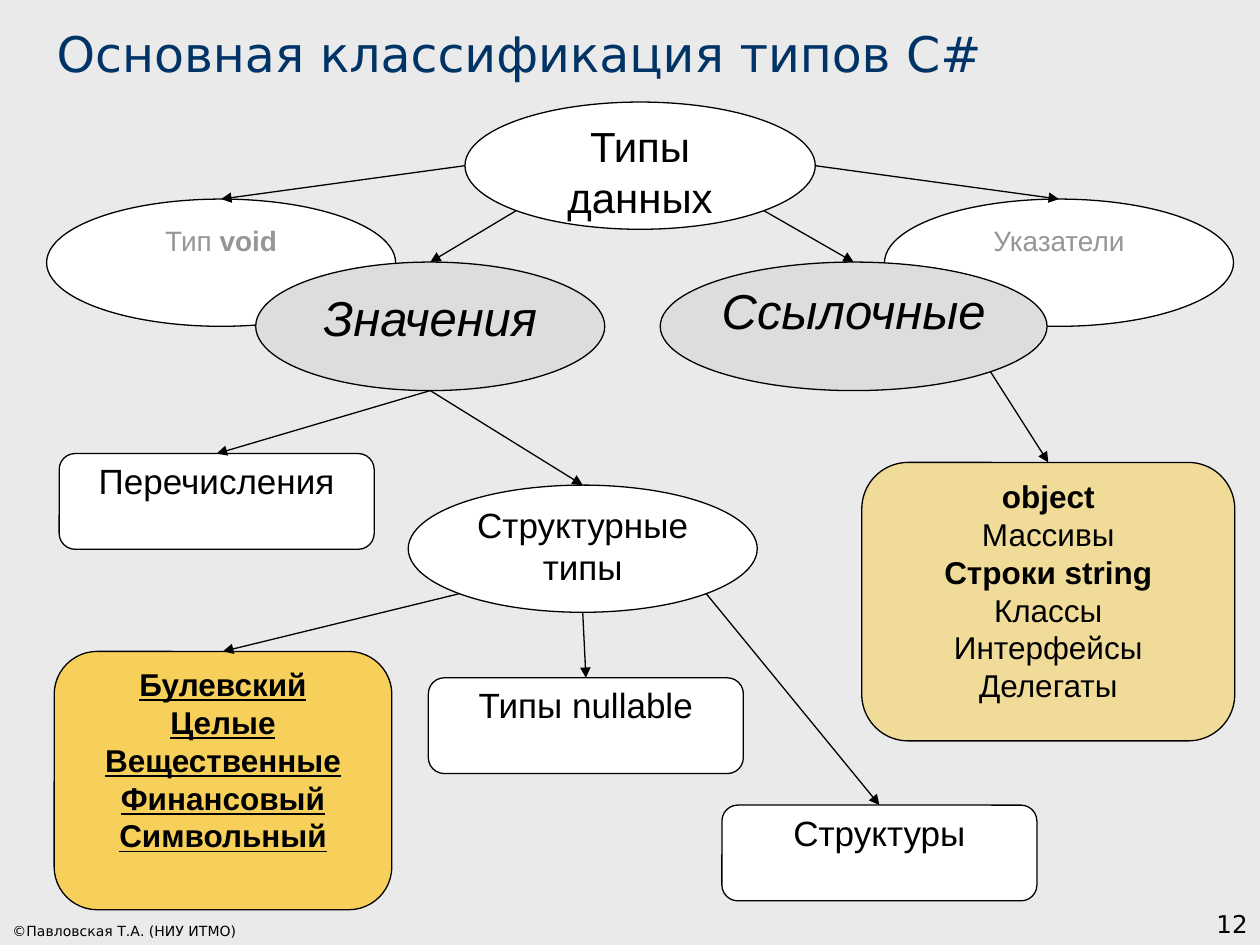
from lxml.etree import SubElement
from pptx import Presentation
from pptx.dml.color import RGBColor
from pptx.enum.shapes import MSO_CONNECTOR, MSO_SHAPE
from pptx.enum.text import MSO_ANCHOR, PP_ALIGN
from pptx.oxml.ns import qn
from pptx.util import Inches, Pt

COLORS = {"bg": "EAEAEA", "black": "000000", "white": "FFFFFF", "muted": "969696",
          "group": "DDDDDD", "amber": "FFC000", "title": "003366"}
TITLE = "Основная классификация типов C#"
FOOTER = "©Павловская Т.А. (НИУ ИТМО)"
NUMBER = "12"

ROUND = {"kind": MSO_SHAPE.ROUNDED_RECTANGLE, "ins": (0.02, 0.01, 0.02, 0.01)}
FLAT = (0, 0, 0, 0)
NODES = {
    "void": ((0.37, 1.58, 2.77, 1.01), [["Тип ", ("void", True)]], 16, {"color": "muted"}),
    "pointers": ((7.02, 1.58, 2.77, 1.01), ["Указатели"], 16, {"color": "muted"}),
    "types": ((3.69, 0.81, 2.78, 1.01), ["Типы данных"], 24, {"ins": (0.1, 0, 0.1, 0.05)}),
    "references": ((5.24, 2.08, 3.07, 1.02), ["Ссылочные"], 28,
                   {"fill": "group", "italic": True, "ins": FLAT}),
    "values": ((2.03, 2.08, 2.77, 1.02), ["Значения"], 28, {"fill": "group", "italic": True}),
    "classes": ((6.84, 3.67, 2.96, 2.21),
                [[("object", True)], "Массивы", [("Строки string", True)],
                 "Классы", "Интерфейсы", "Делегаты"], 18,
                {"fill": "amber", "alpha": 35, **ROUND}),
    "builtin": ((0.43, 5.17, 2.68, 2.05),
                ["Булевский", "Целые", "Вещественные", "Финансовый", "Символьный"], 18,
                {"fill": "amber", "alpha": 61, "bold": True, "underline": True, **ROUND}),
    "enums": ((0.47, 3.6, 2.5, 0.76), ["Перечисления"], 20, ROUND),
    "structural": ((3.24, 3.85, 2.77, 1.01), ["Структурные", "типы"], 20, {"ins": FLAT}),
    "structs": ((5.73, 6.39, 2.5, 0.76), ["Структуры"], 20, ROUND),
    "nullable": ((3.4, 5.38, 2.5, 0.76), ["Типы nullable"], 20, ROUND),
}
SITES = {"left": (0, 0.5), "right": (1, 0.5), "top": (0.5, 0), "bottom": (0.5, 1),
         "bottom left": (0.146, 0.854), "bottom right": (0.854, 0.854)}
LINKS = [
    ("types", "left", "void"),
    ("types", "right", "pointers"),
    ("types", "bottom left", "values"),
    ("types", "bottom right", "references"),
    ("values", "bottom", "enums"),
    ("values", "bottom", "structural"),
    ("references", "bottom right", "classes"),
    ("structural", "bottom left", "builtin"),
    ("structural", "bottom", "nullable"),
    ("structural", "bottom right", "structs"),
]


def rgb(name):
    return RGBColor.from_string(COLORS[name])


def write(sp, lines, size, color="black", font="Arial", bold=False, italic=False,
          underline=False, align=PP_ALIGN.CENTER, anchor=MSO_ANCHOR.TOP,
          ins=(0.1, 0.05, 0.1, 0.05)):
    tf = sp.text_frame
    tf.word_wrap = True
    tf.vertical_anchor = anchor
    tf.margin_left, tf.margin_top, tf.margin_right, tf.margin_bottom = map(Inches, ins)
    for i, line in enumerate(lines):
        p = tf.add_paragraph() if i else tf.paragraphs[0]
        p.alignment = align
        for part in [line] if isinstance(line, str) else line:
            text, strong = (part, bold) if isinstance(part, str) else part
            r = p.add_run()
            r.text = text
            r.font.name, r.font.size = font, Pt(size)
            r.font.bold, r.font.italic, r.font.underline = strong, italic, underline
            r.font.color.rgb = rgb(color)


def add_node(s, box, lines, size, kind=MSO_SHAPE.OVAL, fill="white", alpha=None, **text):
    sp = s.shapes.add_shape(kind, *map(Inches, box))
    sp.shadow.inherit = False
    sp.fill.solid()
    sp.fill.fore_color.rgb = rgb(fill)
    if alpha:
        clr = sp.fill._xPr.find(qn("a:solidFill"))[0]
        SubElement(clr, qn("a:alpha"), val=str(alpha * 1000))
    sp.line.color.rgb = rgb("black")
    sp.line.width = Pt(0.75)
    write(sp, lines, size, **text)


def point(node, site):
    x, y, w, h = NODES[node][0]
    fx, fy = SITES[site]
    return Inches(x + fx * w), Inches(y + fy * h)


def add_arrow(s, source, site, target):
    c = s.shapes.add_connector(MSO_CONNECTOR.STRAIGHT, *point(source, site), *point(target, "top"))
    c.line.color.rgb = rgb("black")
    c.line.width = Pt(0.75)
    SubElement(c.line._get_or_add_ln(), qn("a:tailEnd"), type="triangle")
    SubElement(c._element.spPr, qn("a:effectLst"))


def main():
    prs = Presentation()
    prs.slide_width, prs.slide_height = Inches(10), Inches(7.5)
    s = prs.slides.add_slide(prs.slide_layouts[5])
    s.background.fill.solid()
    s.background.fill.fore_color.rgb = rgb("bg")

    title = s.shapes.title
    title.left, title.top, title.width, title.height = map(Inches, (0.35, 0.13, 8.93, 0.57))
    label = {"font": "DejaVu Sans", "anchor": MSO_ANCHOR.BOTTOM}
    write(title, [TITLE], 28, color="title", align=PP_ALIGN.LEFT, **label)

    footer = s.shapes.add_textbox(*map(Inches, (0, 7.22, 3.11, 0.28)))
    write(footer, [FOOTER], 8, align=PP_ALIGN.LEFT, **label)
    number = s.shapes.add_textbox(*map(Inches, (7.92, 7, 2.08, 0.5)))
    write(number, [NUMBER], 14, align=PP_ALIGN.RIGHT, **label)

    for box, lines, size, style in NODES.values():
        add_node(s, box, lines, size, **style)
    for link in LINKS:
        add_arrow(s, *link)
    prs.save("out.pptx")


if __name__ == "__main__":
    main()
